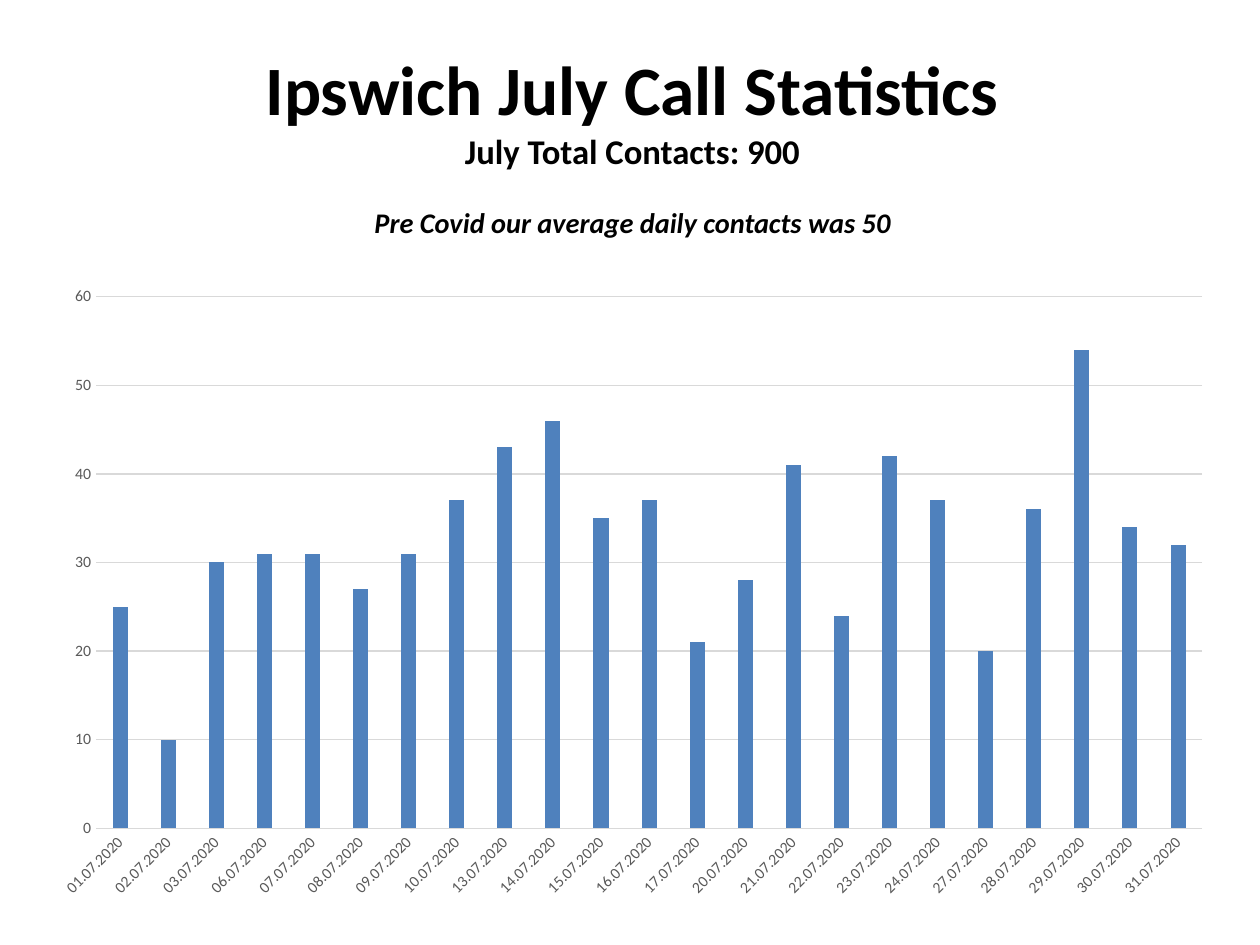
from dataclasses import dataclass

from pptx import Presentation
from pptx.chart import data as chart_data
from pptx.dml.color import RGBColor
from pptx.enum import chart as chart_enum
from pptx.enum import text
from pptx.util import Pt

BLACK = RGBColor(0x00, 0x00, 0x00)
LABEL_GREY = RGBColor(0x59, 0x59, 0x59)
GRID_GREY = RGBColor(0xD9, 0xD9, 0xD9)
BAR_BLUE = RGBColor(0x4F, 0x81, 0xBD)
FONT = "Calibri"


@dataclass
class Heading:
    wording: str
    size: float
    italic: bool = False
    space_before: float = 0


HEADINGS = [
    Heading("Ipswich July Call Statistics", 39.6),
    Heading("July Total Contacts: 900", 19.8),
    Heading("Pre Covid our average daily contacts was 50", 16.2, True, 19.5),
]

WEEKDAYS = [day for day in range(1, 32) if (day + 1) % 7 < 5]
CONTACTS = [25, 10, 30, 31, 31, 27, 31, 37, 43, 46, 35, 37,
            21, 28, 41, 24, 42, 37, 20, 36, 54, 34, 32]


def format_font(font, size: float, color: RGBColor) -> None:
    font.name = FONT
    font.size = Pt(size)
    font.color.rgb = color


def format_line(line, color: RGBColor) -> None:
    line.color.rgb = color
    line.width = Pt(0.75)


def fill_title(title, headings: list[Heading]) -> None:
    title.left, title.top = Pt(14.4), Pt(54.7)
    title.width, title.height = Pt(694), Pt(67.7)
    frame = title.text_frame
    frame.text = "\n".join(heading.wording for heading in headings)
    frame.auto_size = text.MSO_AUTO_SIZE.NONE
    frame.word_wrap = True
    frame.vertical_anchor = text.MSO_ANCHOR.MIDDLE
    frame.margin_bottom = Pt(17.6)
    for paragraph, heading in zip(frame.paragraphs, headings):
        paragraph.alignment = text.PP_ALIGN.CENTER
        paragraph.space_before = Pt(heading.space_before)
        font = paragraph.runs[0].font
        format_font(font, heading.size, BLACK)
        font.bold = True
        font.italic = heading.italic


def add_contacts_chart(slide) -> None:
    contacts = chart_data.CategoryChartData()
    contacts.categories = [f"{day:02}.07.2020" for day in WEEKDAYS]
    contacts.add_series("Series 1", CONTACTS)
    chart = slide.shapes.add_chart(
        chart_enum.XL_CHART_TYPE.COLUMN_CLUSTERED,
        Pt(22.3), Pt(157), Pt(678.2), Pt(362.9), contacts,
    ).chart
    chart.has_title = False
    chart.has_legend = False
    format_font(chart.font, 10, BLACK)

    plot = chart.plots[0]
    plot.gap_width = 219
    plot.overlap = -27
    plot.vary_by_categories = False
    fill = plot.series[0].format.fill
    fill.solid()
    fill.fore_color.rgb = BAR_BLUE

    for axis in (chart.category_axis, chart.value_axis):
        axis.major_tick_mark = chart_enum.XL_TICK_MARK.NONE
        axis.minor_tick_mark = chart_enum.XL_TICK_MARK.NONE
        format_font(axis.tick_labels.font, 9, LABEL_GREY)
    format_line(chart.category_axis.format.line, GRID_GREY)
    chart.element.xpath(".//c:catAx/c:txPr/a:bodyPr")[0].set("rot", "-2700000")

    value_axis = chart.value_axis
    value_axis.minimum_scale = 0
    value_axis.maximum_scale = 60
    value_axis.major_unit = 10
    value_axis.format.line.fill.background()
    format_line(value_axis.major_gridlines.format.line, GRID_GREY)


def main() -> None:
    presentation = Presentation()
    presentation.slide_width = Pt(720)
    presentation.slide_height = Pt(540)
    slide = presentation.slides.add_slide(presentation.slide_layouts[5])
    fill_title(slide.shapes.title, HEADINGS)
    add_contacts_chart(slide)
    presentation.save("out.pptx")


if __name__ == "__main__":
    main()
